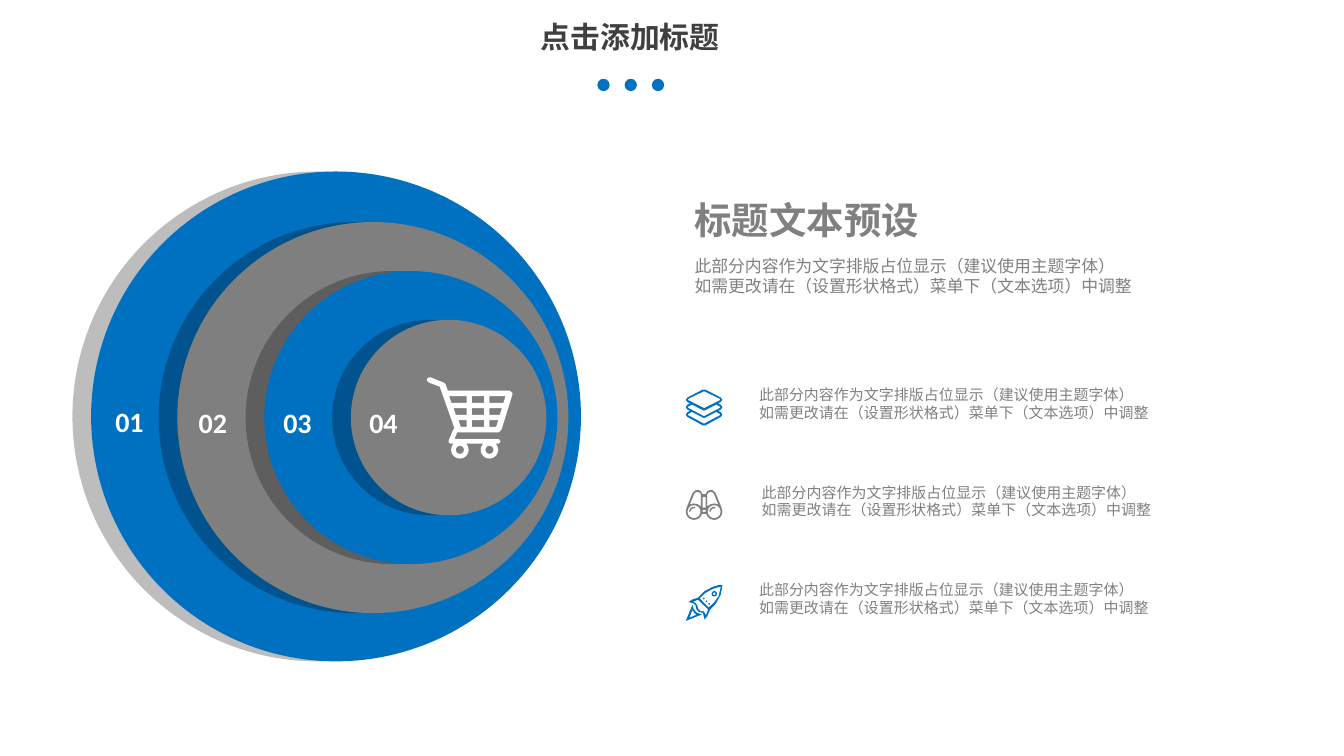
from math import cos, radians, sin

from lxml.etree import SubElement
from pptx import Presentation
from pptx.dml.color import RGBColor
from pptx.enum.shapes import MSO_SHAPE
from pptx.enum.text import MSO_ANCHOR, PP_ALIGN
from pptx.oxml.ns import qn
from pptx.util import Pt

BLUE, GRAY, TEXT_GRAY, DARK, WHITE = "0070C0", "7F7F7F", "808080", "404040", "FFFFFF"
CHINESE, LATIN = "Noto Sans CJK SC", "Calibri"
BODY = "此部分内容作为文字排版占位显示（建议使用主题字体）\n如需更改请在（设置形状格式）菜单下（文本选项）中调整"
ICON_UNIT = 0.72
ICON_AXIS = 13.6


def color(value):
    return RGBColor.from_string(value)


def arc(x, y, radius, start=0, end=360, step=15):
    angles = [radians(angle) for angle in range(start, end + 1, step)]
    return [(x + radius * cos(angle), y + radius * sin(angle)) for angle in angles]


def mirror(points):
    return [(2 * ICON_AXIS - x, y) for x, y in reversed(points)]


def symmetric(half):
    right = [(ICON_AXIS + x, y) for x, y in half]
    return right + mirror(right)


def layers_icon():
    outline = [(1, 0.2), (12.5, 6.2), (13.6, 7.8), (12.5, 9.3), (10.5, 10.4),
               (12.5, 11.6), (13.6, 13.3), (12.5, 15), (10.5, 16),
               (12.5, 17.1), (13.6, 18.9), (12.5, 20.5), (1, 26.8)]
    top = [(0, 1.4), (12, 7.2), (12, 8), (0, 14)]
    middle = [(0, 15.8), (1, 15.5), (9, 11.3), (12, 13), (12, 13.7), (0, 20)]
    bottom = [(0, 21.3), (1, 21), (9, 16.8), (12, 18.5), (12, 19.2), (0, 25.6)]
    return [symmetric(half) for half in (outline, top, middle, bottom)]


def binoculars_icon():
    lens = (ICON_AXIS + 7.5, 16)
    outline = [(1.2, 3), (2.2, 1), (4, 0), (6.2, 0), (8.5, 2), (13, 13)]
    outline += [(x - ICON_AXIS, y) for x, y in arc(*lens, 6.1, 0, 165)]
    bridge = [[(1.1, 5), (1.1, 13)], [(1.1, 14.7), (1.1, 16.2)]]
    barrel = [(ICON_AXIS + x, y) for x, y in [
        (2.3, 3), (3.8, 1.4), (6, 1.4), (7.3, 2.6), (10.6, 10.6),
        (7.7, 9.9), (4.8, 10.5), (2.3, 12)]]
    glint = arc(*lens, 3.6, 180, 285) + arc(*lens, 2.5, 180, 285)[::-1]
    left_glint = [(x - 15, y) for x, y in glint]
    contours = [symmetric(half) for half in [outline] + bridge]
    for part in (barrel, arc(*lens, 4.8)):
        contours += [part, mirror(part)]
    return contours + [glint, left_glint]


def rocket_icon():
    body = [(27.3, 0.1), (25, 0.2), (20, 1.7), (14, 4.8), (9, 9.8), (5, 11), (2, 13),
            (5.5, 13.8), (7.2, 15.2), (8, 18.5), (9.8, 20.4), (12.7, 21), (14, 26),
            (16, 23.5), (18, 18.8), (22.5, 14), (26, 7.5)]
    cabin = [(26, 1.4), (20, 3.2), (14.5, 6.2), (10.3, 10.2), (17, 17), (21, 13.4), (24.5, 8.5)]
    fins = [(9, 11.2), (5.5, 12.8), (7.5, 13.8), (8.4, 15.2), (9.2, 18), (11, 19.7),
            (13.5, 20), (15, 22.8), (16.7, 18.5)]
    flame = [(5, 15), (0, 27), (12, 22.2), (8, 20.8), (5.8, 18.2)]
    core = [(5, 18.8), (2.7, 24.6), (8, 22.4), (6.2, 21)]
    rivets = [arc(x, y, 0.6) for x, y in [(13.4, 10.3), (15.4, 12.4), (17.4, 14.4)]]
    return [body, cabin, fins, flame, core, arc(21.2, 6.8, 2), arc(21.2, 6.8, 1)] + rivets


def cart_icon():
    wheels = [(47, 54), (25, 54)]
    frame = [(3, 0), (13, 4), (14.3, 5), (16, 10), (62, 10), (64, 11.5), (64, 13),
             (56, 39), (54, 41), (23, 41), (21, 46), (54, 46), (55.3, 47.8), (54, 49.4)]
    for x, y in wheels:
        frame += arc(x, y, 6.5, -45, 225)
    frame += [(18, 49.4), (16.6, 48.5), (16.7, 47), (20, 39), (21, 38), (10, 7),
              (2, 4), (0.3, 2.3), (1, 0.5)]
    contours = [frame] + [arc(x, y, 3) for x, y in wheels]
    for top, left, right in [(14, 17, 59), (23, 20.3, 56.3), (32, 24, 53.6)]:
        bottom = top + 5
        contours += [[(left, top), (30, top), (30, bottom), (left + 1.7, bottom)],
                     [(34, top), (43, top), (43, bottom), (34, bottom)],
                     [(47, top), (right, top), (right - 1.6, bottom), (47, bottom)]]
    return contours


class Painter:
    def __init__(self, slide):
        self.slide = slide

    def fill_frame(self, frame, text, size, fill, font=CHINESE, bold=False,
                   align=PP_ALIGN.LEFT, inset=3.6):
        settings = {"word_wrap": True, "vertical_anchor": MSO_ANCHOR.TOP,
                    "margin_left": Pt(7.2), "margin_right": Pt(7.2),
                    "margin_top": Pt(inset), "margin_bottom": Pt(inset)}
        for name, value in settings.items():
            setattr(frame, name, value)
        para = frame.paragraphs[0]
        para.text = text
        para.alignment = align
        for span in para.runs:
            for name, value in {"name": font, "size": Pt(size), "bold": bold}.items():
                setattr(span.font, name, value)
            span.font.color.rgb = color(fill)
            SubElement(span._r.get_or_add_rPr(), qn("a:ea"), typeface=font)

    def title(self, text, left, top, width, height):
        box = self.slide.shapes.title
        for name, value in {"left": left, "top": top, "width": width, "height": height}.items():
            setattr(box, name, Pt(value))
        self.fill_frame(box.text_frame, text, 16, DARK, bold=True, align=PP_ALIGN.CENTER, inset=0)

    def text(self, text, left, top, width, height, size, fill, **style):
        box = self.slide.shapes.add_textbox(Pt(left), Pt(top), Pt(width), Pt(height))
        self.fill_frame(box.text_frame, text, size, fill, **style)

    def paint(self, shape, fill):
        shape.shadow.inherit = False
        shape.fill.solid()
        shape.fill.fore_color.rgb = color(fill)
        shape.line.fill.background()

    def circle(self, left, top, size, fill):
        shape = self.slide.shapes.add_shape(
            MSO_SHAPE.OVAL, Pt(left), Pt(top), Pt(size), Pt(size))
        self.paint(shape, fill)
        return shape

    def shadowed_circle(self, left, top, size, fill):
        shape = self.circle(left, top, size, fill)
        effects = shape._element.spPr.find(qn("a:effectLst"))
        shadow = SubElement(effects, qn("a:outerShdw"), blurRad="0", dist=str(Pt(10)),
                            dir="10800000", algn="r", rotWithShape="0")
        black = SubElement(shadow, qn("a:srgbClr"), val="000000")
        SubElement(black, qn("a:alpha"), val="25000")

    def icon(self, contours, left, top, fill):
        placed = [[(Pt(left + x * ICON_UNIT), Pt(top + y * ICON_UNIT)) for x, y in contour]
                  for contour in contours]
        builder = self.slide.shapes.build_freeform(*placed[0][0])
        builder.add_line_segments(placed[0][1:], close=True)
        for contour in placed[1:]:
            builder.move_to(*contour[0])
            builder.add_line_segments(contour[1:], close=True)
        self.paint(builder.convert_to_shape(), fill)


def main():
    deck = Presentation()
    deck.slide_width, deck.slide_height = Pt(720), Pt(405)
    painter = Painter(deck.slides.add_slide(deck.slide_layouts[5]))

    painter.title("点击添加标题", 177.8, 10.1, 319.7, 26.6)
    for index in range(3):
        painter.circle(320 + 14.6 * index, 42.2, 6.6, BLUE)

    rings = [("01", 48.8, 223.1, 262.4, BLUE, 54.7), ("02", 95, 223.7, 209.5, GRAY, 99.4),
             ("03", 141.6, 223.7, 157, BLUE, 144.7), ("04", 188, 223.7, 104.7, GRAY, 190.8)]
    for number, left, middle, size, fill, text_left in rings:
        painter.shadowed_circle(left, middle - size / 2, size, fill)
        painter.text(number, text_left, middle - 10, 53, 23, 15, WHITE, font=LATIN, bold=True)
    painter.icon(cart_icon(), 228.4, 202.1, WHITE)

    painter.text("标题文本预设", 365, 105.8, 265.7, 29.5, 20, TEXT_GRAY, bold=True, inset=0)
    painter.text(BODY, 365, 133.2, 265.7, 49, 9, TEXT_GRAY)

    items = [(layers_icon, 208.6, BLUE, 399.6), (binoculars_icon, 262.6, GRAY, 401),
             (rocket_icon, 313.2, BLUE, 399.6)]
    for index, (draw, icon_top, fill, text_left) in enumerate(items):
        painter.icon(draw(), 367.4, icon_top, fill)
        painter.text(BODY, text_left, 203.1 + 52.2 * index, 261.4, 33.1, 8, TEXT_GRAY)

    deck.save("out.pptx")


if __name__ == "__main__":
    main()
